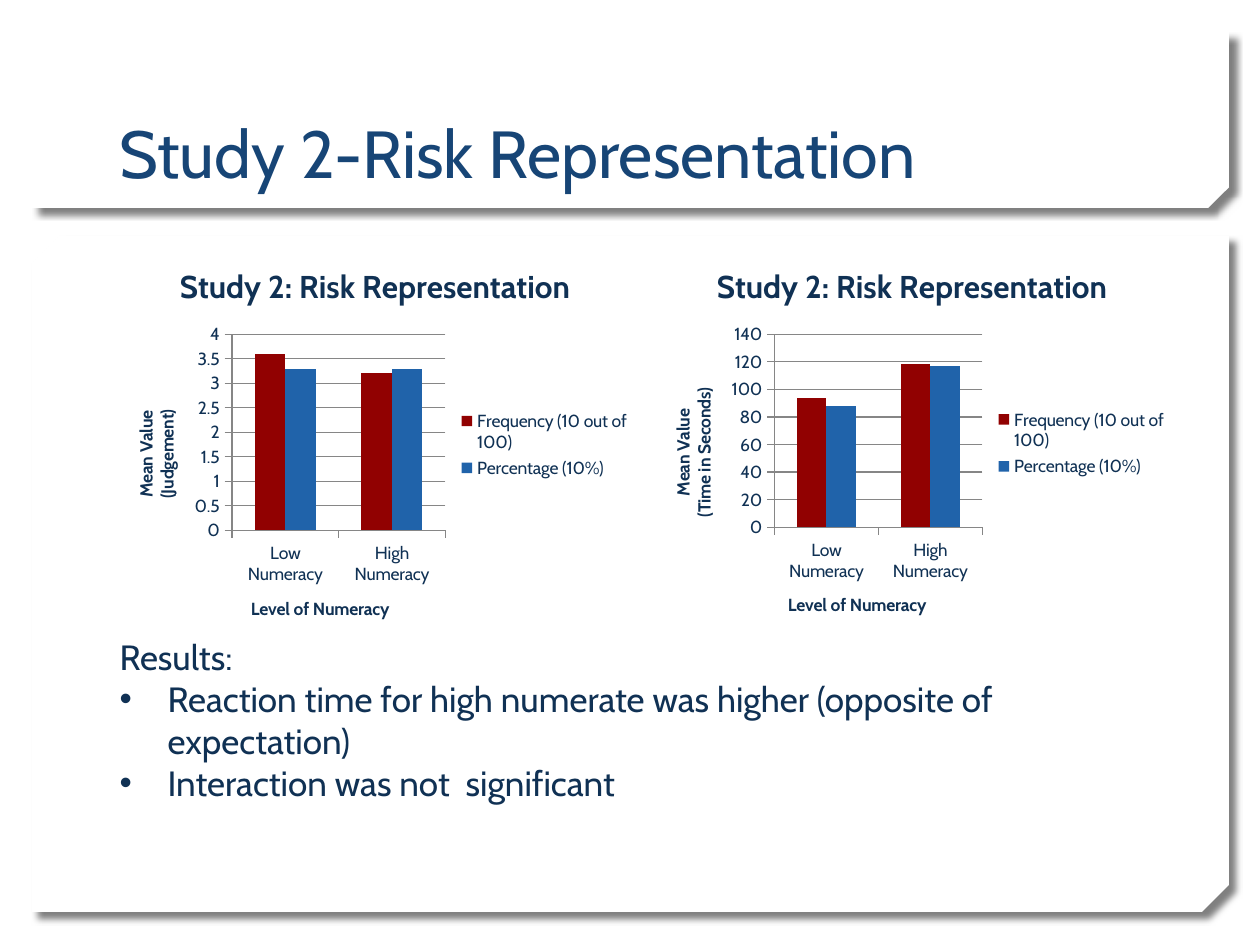
from lxml import etree
from pptx import Presentation
from pptx.chart.data import CategoryChartData
from pptx.dml.color import RGBColor
from pptx.enum.chart import XL_CHART_TYPE, XL_LEGEND_POSITION, XL_TICK_MARK
from pptx.enum.shapes import MSO_SHAPE
from pptx.enum.text import MSO_ANCHOR, MSO_AUTO_SIZE, PP_ALIGN
from pptx.oxml import parse_xml
from pptx.oxml.ns import nsdecls, qn
from pptx.util import Pt

COLUMNS = XL_CHART_TYPE.COLUMN_CLUSTERED
LEGEND_RIGHT = XL_LEGEND_POSITION.RIGHT
TICK_OUTSIDE = XL_TICK_MARK.OUTSIDE
TICK_NONE = XL_TICK_MARK.NONE
SNIPPED = MSO_SHAPE.SNIP_2_DIAG_RECTANGLE
TOP, BOTTOM = MSO_ANCHOR.TOP, MSO_ANCHOR.BOTTOM
LEFT = PP_ALIGN.LEFT
NO_FIT = MSO_AUTO_SIZE.NONE

EMU_PER_PX = 914400 / 126
FONT = "Cabin"
COLORS = {
    "panel": "FFFFFF",
    "title": "174576",
    "text": "103154",
    "frequency": "910101",
    "percentage": "2063AA",
    "axis": "868686",
}
CATEGORIES = ["Low Numeracy", "High Numeracy"]
SERIES = [("Frequency (10 out of 100)", "frequency"), ("Percentage (10%)", "percentage")]
SHADOW = (
    f'<a:effectLst {nsdecls("a")}><a:outerShdw blurRad="50800" dist="63500" '
    'dir="2700000" algn="tl" rotWithShape="0"><a:srgbClr val="000000">'
    '<a:alpha val="50000"/></a:srgbClr></a:outerShdw></a:effectLst>'
)


def px(*lengths):
    return [round(length * EMU_PER_PX) for length in lengths]


def rgb(name):
    return RGBColor.from_string(COLORS[name])


def style_font(font, size, color="text", bold=False):
    font.name = FONT
    font.size = Pt(size)
    font.bold = bold
    font.color.rgb = rgb(color)


def write_text(frame, text, size, color="text", bold=False, align=None):
    frame.text = text
    for para in frame.paragraphs:
        para.alignment = align
        for span in para.runs:
            style_font(span.font, size, color, bold)


def add_panel(page, bounds, snip):
    panel = page.shapes.add_shape(SNIPPED, *px(*bounds))
    panel.adjustments[0] = 0
    panel.adjustments[1] = snip
    panel.fill.solid()
    panel.fill.fore_color.rgb = rgb("panel")
    panel.line.fill.background()
    properties = panel._element.spPr
    properties.find(qn("a:xfrm")).set("flipV", "1")
    properties.append(parse_xml(SHADOW))
    page.shapes._spTree.insert(2, panel._element)


def fill_placeholder(holder, bounds, text, anchor, **text_format):
    holder.left, holder.top, holder.width, holder.height = px(*bounds)
    frame = holder.text_frame
    write_text(frame, text, align=LEFT, **text_format)
    frame.auto_size = NO_FIT
    frame.word_wrap = True
    frame.vertical_anchor = anchor
    return frame.paragraphs


def set_bullet(para, mark=None):
    indent = px(48)[0] if mark else 0
    para.space_before = Pt(0)
    properties = para._p.get_or_add_pPr()
    properties.set("marL", str(indent))
    properties.set("indent", str(-indent))
    if mark:
        etree.SubElement(properties, qn("a:buFont")).set("typeface", "Arial")
        etree.SubElement(properties, qn("a:buChar")).set("char", mark)
    else:
        etree.SubElement(properties, qn("a:buNone"))


def style_axis(axis, title):
    write_text(axis.axis_title.text_frame, title, 10, bold=True)
    axis.major_tick_mark = TICK_OUTSIDE
    axis.minor_tick_mark = TICK_NONE
    axis.format.line.color.rgb = rgb("axis")
    style_font(axis.tick_labels.font, 10)


def add_column_chart(page, bounds, value_title, columns, minimum=None):
    data = CategoryChartData()
    data.categories = CATEGORIES
    for (name, _), values in zip(SERIES, columns):
        data.add_series(name, values)
    chart = page.shapes.add_chart(COLUMNS, *px(*bounds), data).chart
    style_font(chart.font, 10)
    chart.has_title = True
    write_text(chart.chart_title.text_frame, "Study 2: Risk Representation", 18, bold=True)
    chart.chart_title.include_in_layout = False

    chart.has_legend = True
    chart.legend.position = LEGEND_RIGHT
    chart.legend.include_in_layout = False
    style_font(chart.legend.font, 10)

    style_axis(chart.category_axis, "Level of Numeracy")
    value_axis = chart.value_axis
    style_axis(value_axis, value_title)
    rotation = value_axis.axis_title.text_frame._txBody.find(qn("a:bodyPr"))
    rotation.set("rot", "-5400000")
    rotation.set("vert", "horz")
    value_axis.has_major_gridlines = True
    value_axis.major_gridlines.format.line.color.rgb = rgb("axis")
    if minimum is not None:
        value_axis.minimum_scale = minimum

    plot = chart.plots[0]
    plot.gap_width = 150
    plot.overlap = 0
    plot.vary_by_categories = False
    for series, (_, color) in zip(plot.series, SERIES):
        series.format.fill.solid()
        series.format.fill.fore_color.rgb = rgb(color)


def main():
    deck = Presentation()
    deck.slide_width, deck.slide_height = px(1260, 945)
    page = deck.slides.add_slide(deck.slide_layouts[1])

    add_panel(page, (32, 32, 1197, 176), 0.117)
    add_panel(page, (32, 236, 1197, 676), 0.04)
    fill_placeholder(page.shapes.title, (107, 40, 1045, 158),
                     "Study 2-Risk Representation", BOTTOM, size=38, color="title")

    results = "\n".join([
        "Results:",
        "Reaction time for high numerate was higher (opposite of expectation)",
        "Interaction was not  significant",
    ])
    heading, *findings = fill_placeholder(
        page.placeholders[1], (107, 629, 1045, 183), results, TOP, size=20)
    set_bullet(heading)
    for finding in findings:
        set_bullet(finding, "•")

    add_column_chart(page, (107, 244, 536, 401), "Mean Value\n(Judgement)",
                     [(3.6, 3.2), (3.3, 3.3)], minimum=0)
    add_column_chart(page, (644, 244, 536, 398), "Mean Value\n(Time in Seconds)",
                     [(94, 118), (88, 117)])
    deck.save("out.pptx")


if __name__ == "__main__":
    main()
